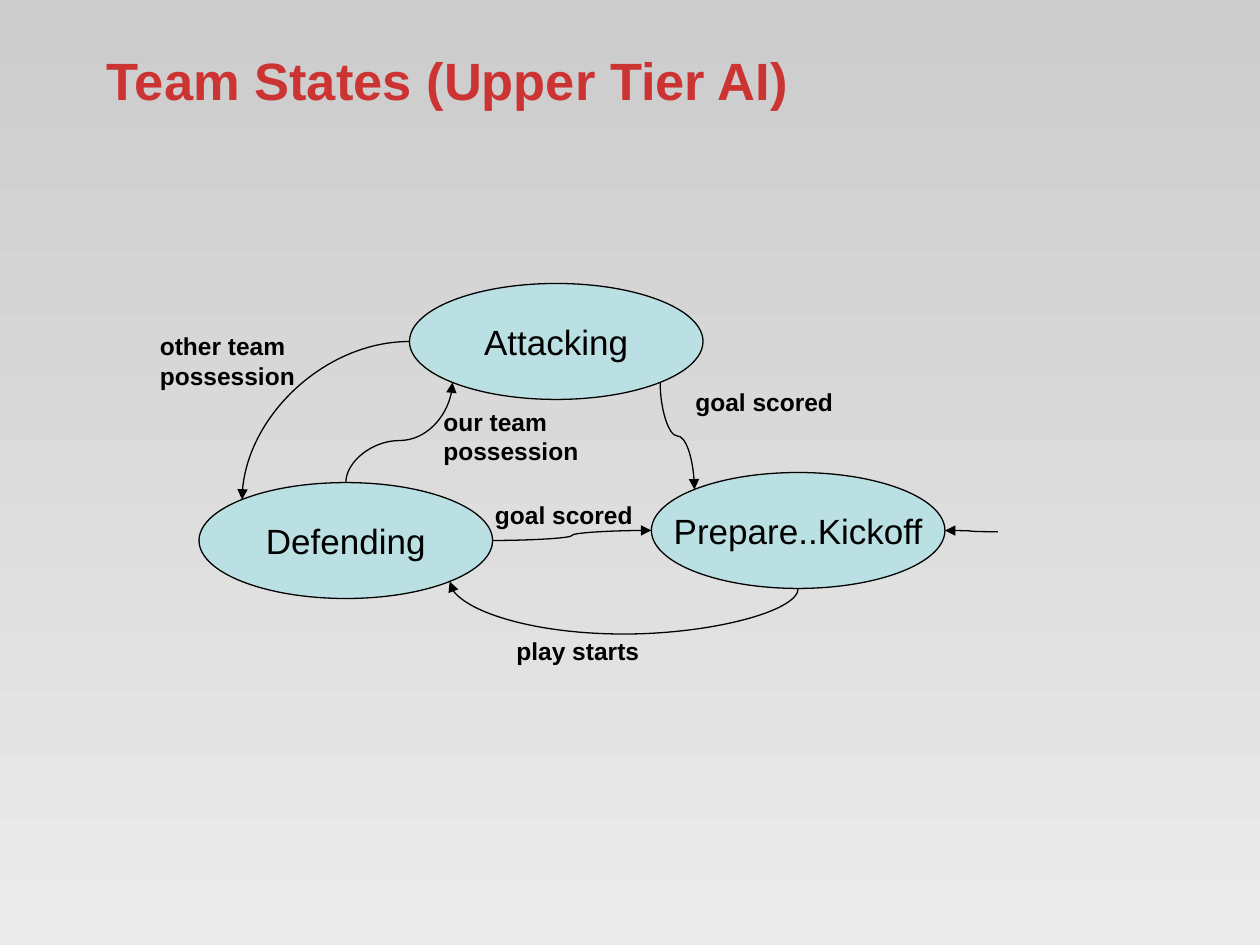
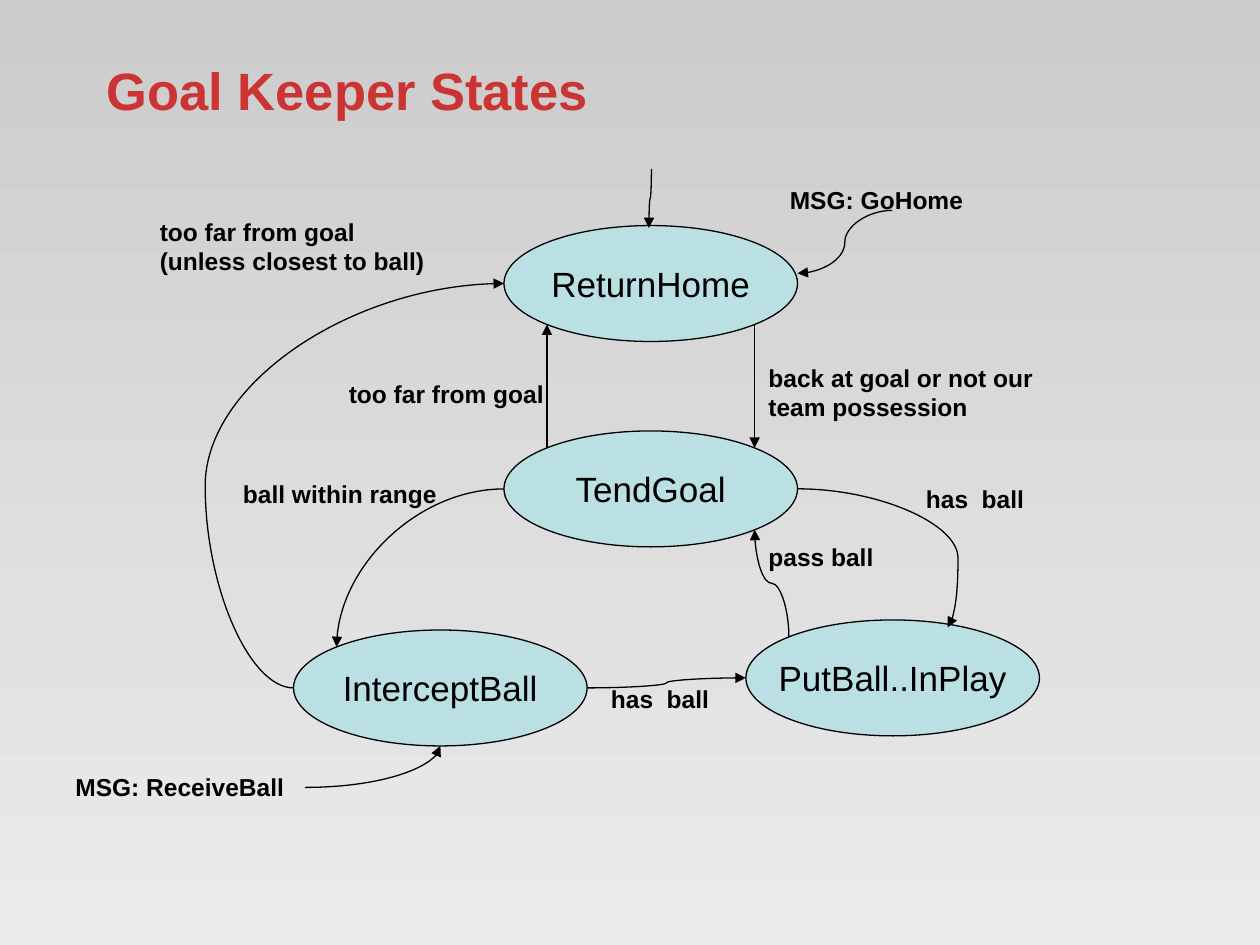
import pptx
import pptx.util
import pptx.dml.color
import pptx.enum.shapes
import pptx.enum.text
import pptx.oxml
import pptx.oxml.ns
from pptx.util import Inches

COLORS = {"title": "CC3333", "ink": "000000", "state": "BBE0E3",
          "sky": "CCCCCC", "ground": "EBEBEB"}
FONT = "Arial"
STATE_W, STATE_H = 2.33, 0.92
DIAGONAL = 0.1464
SITES = {"n": (0.5, 0), "e": (1, 0.5), "s": (0.5, 1), "w": (0, 0.5),
         "nw": (DIAGONAL, DIAGONAL), "ne": (1 - DIAGONAL, DIAGONAL),
         "sw": (DIAGONAL, 1 - DIAGONAL), "se": (1 - DIAGONAL, 1 - DIAGONAL)}


def rgb(name):
    """Return the named colour."""
    return pptx.dml.color.RGBColor.from_string(COLORS[name])


def write(shape, text, size, color="ink", bold=False, wrap=True):
    """Put one styled paragraph into a shape and return the paragraph."""
    tf = shape.text_frame
    tf.word_wrap = wrap
    p = tf.paragraphs[0]
    p.text = text
    p.font.name = FONT
    p.font.size = pptx.util.Pt(size)
    p.font.bold = bold
    p.font.color.rgb = rgb(color)
    return p


def add_slide(prs, title, title_top):
    """Add a slide with the gradient background and a title."""
    s = prs.slides.add_slide(prs.slide_layouts[6])
    fill = s.background.fill
    fill.gradient()
    fill.gradient_angle = 270
    for stop, name in zip(fill.gradient_stops, ("sky", "ground")):
        stop.color.rgb = rgb(name)
    sp = s.shapes.add_textbox(Inches(0.75), Inches(title_top), Inches(8.5), Inches(0.92))
    sp.text_frame.vertical_anchor = pptx.enum.text.MSO_ANCHOR.MIDDLE
    write(sp, title, 30, "title", bold=True)
    return s


def add_state(s, name, left, top):
    """Add a state ellipse."""
    sp = s.shapes.add_shape(pptx.enum.shapes.MSO_SHAPE.OVAL, Inches(left), Inches(top),
                            Inches(STATE_W), Inches(STATE_H))
    sp.shadow.inherit = False
    sp.fill.solid()
    sp.fill.fore_color.rgb = rgb("state")
    sp.line.color.rgb = rgb("ink")
    sp.line.width = pptx.util.Pt(0.75)
    sp.text_frame.vertical_anchor = pptx.enum.text.MSO_ANCHOR.MIDDLE
    p = write(sp, name, 20, wrap=False)
    p.alignment = pptx.enum.text.PP_ALIGN.CENTER


def add_label(s, text, left, top, width=1.75, height=0.33):
    """Add a bold transition label."""
    sp = s.shapes.add_textbox(Inches(left), Inches(top), Inches(width), Inches(height))
    write(sp, text, 14, bold=True)


def locate(states, end):
    """Turn a (state, site) pair into a point; pass plain points through."""
    if end[0] not in states:
        return end
    left, top = states[end[0]]
    fx, fy = SITES[end[1]]
    return left + fx * STATE_W, top + fy * STATE_H


def orient(dx, dy, route):
    """Return rotation, horizontal flip and vertical flip of a curve."""
    if route != "vertical":
        return (180 if dx < 0 else 0), False, (dx < 0) != (dy < 0)
    if dy > 0 and dx <= 0:
        return 90, False, False
    return 270, dy > 0, dx < 0


def add_transition(s, states, start, end, route="horizontal", bend=0.5):
    """Add a curved arrow that leaves along the route, or turns one corner."""
    (x1, y1), (x2, y2) = locate(states, start), locate(states, end)
    dx, dy = x2 - x1, y2 - y1
    w, h = abs(dx), abs(dy)
    if route == "vertical":
        w, h = h, w
    left, top = (x1 + x2 - w) / 2, (y1 + y2 - h) / 2
    c = s.shapes.add_connector(pptx.enum.shapes.MSO_CONNECTOR.CURVE, Inches(left),
                               Inches(top), Inches(left + w), Inches(top + h))
    c.line.color.rgb = rgb("ink")
    c.line.width = pptx.util.Pt(0.75)
    qn, sub = pptx.oxml.ns.qn, pptx.oxml.parse_xml
    ns = pptx.oxml.ns.nsdecls("a")
    spPr = c._element.spPr
    rotation, flip_h, flip_v = orient(dx, dy, route)
    xfrm = spPr.find(qn("a:xfrm"))
    xfrm.set("rot", str(rotation * 60000))
    xfrm.set("flipH", str(int(flip_h)))
    xfrm.set("flipV", str(int(flip_v)))
    geom = spPr.find(qn("a:prstGeom"))
    if route == "corner":
        geom.set("prst", "curvedConnector2")
    else:
        guide = f'<a:gd {ns} name="adj1" fmla="val {round(bend * 100000)}"/>'
        geom.find(qn("a:avLst")).append(sub(guide))
    spPr.find(qn("a:ln")).append(sub(f'<a:tailEnd {ns} type="triangle"/>'))
    spPr.append(sub(f"<a:effectLst {ns}/>"))


def add_diagram(s, states, transitions, labels):
    """Draw the states, transitions and labels of one state machine."""
    for name, (left, top) in states.items():
        add_state(s, name, left, top)
    for transition in transitions:
        add_transition(s, states, *transition)
    for label in labels:
        add_label(s, *label)


def add_team_states(prs):
    """Build the team state machine."""
    s = add_slide(prs, "Team States (Upper Tier AI)", 0.17)
    attack, defend, kickoff = "Attacking", "Defending", "Prepare..Kickoff"
    states = {attack: (3.25, 2.25), defend: (1.58, 3.83), kickoff: (5.17, 3.75)}
    transitions = [
        ((defend, "n"), (attack, "sw"), "vertical", 0.42),
        ((attack, "w"), (defend, "nw"), "corner"),
        ((defend, "e"), (kickoff, "w")),
        ((attack, "se"), (kickoff, "nw"), "vertical"),
        ((kickoff, "s"), (defend, "se"), "vertical", -6.62),
        ((7.92, 4.22), (kickoff, "e")),
    ]
    labels = [
        ("other team possession", 1.17, 2.58, 1.75, 0.57),
        ("our team possession", 3.42, 3.18, 1.75, 0.57),
        ("goal scored", 5.42, 3.02),
        ("goal scored", 3.83, 3.92),
        ("play starts", 4, 5),
    ]
    add_diagram(s, states, transitions, labels)


def add_keeper_states(prs):
    """Build the goal keeper state machine."""
    s = add_slide(prs, "Goal Keeper States", 0.25)
    tend, intercept, put, home = "TendGoal", "InterceptBall", "PutBall..InPlay", "ReturnHome"
    states = {tend: (4, 3.42), intercept: (2.33, 5), put: (5.92, 4.92), home: (4, 1.79)}
    transitions = [
        ((intercept, "e"), (put, "w")),
        ((tend, "w"), (intercept, "nw"), "corner"),
        ((put, "nw"), (tend, "se"), "vertical"),
        ((home, "se"), (tend, "ne"), "vertical"),
        ((tend, "nw"), (home, "sw"), "vertical"),
        ((tend, "e"), (7.52, 4.98), "horizontal", 1.07),
        ((intercept, "w"), (home, "w"), "horizontal", -0.42),
        ((7.08, 1.67), (6.33, 2.17)),
        ((2.42, 6.25), (intercept, "s"), "corner"),
        ((5.17, 1.34), (5.15, 1.81), "vertical"),
    ]
    labels = [
        ("ball within range", 1.83, 3.75),
        ("pass ball", 6, 4.25),
        ("too far from goal", 2.67, 2.96),
        ("back at goal or not our team possession", 6, 2.83, 2.75, 0.57),
        ("has  ball", 7.25, 3.79),
        ("has  ball", 4.75, 5.38),
        ("too far from goal (unless closest to ball)", 1.17, 1.67, 2.33, 0.57),
        ("MSG: GoHome", 6.17, 1.42, 2.08),
        ("MSG: ReceiveBall", 0.5, 6.08, 2),
    ]
    add_diagram(s, states, transitions, labels)


def main():
    """Build and save the presentation."""
    prs = pptx.Presentation()
    prs.slide_width, prs.slide_height = Inches(10), Inches(7.5)
    add_team_states(prs)
    add_keeper_states(prs)
    prs.save("out.pptx")


if __name__ == "__main__":
    main()
